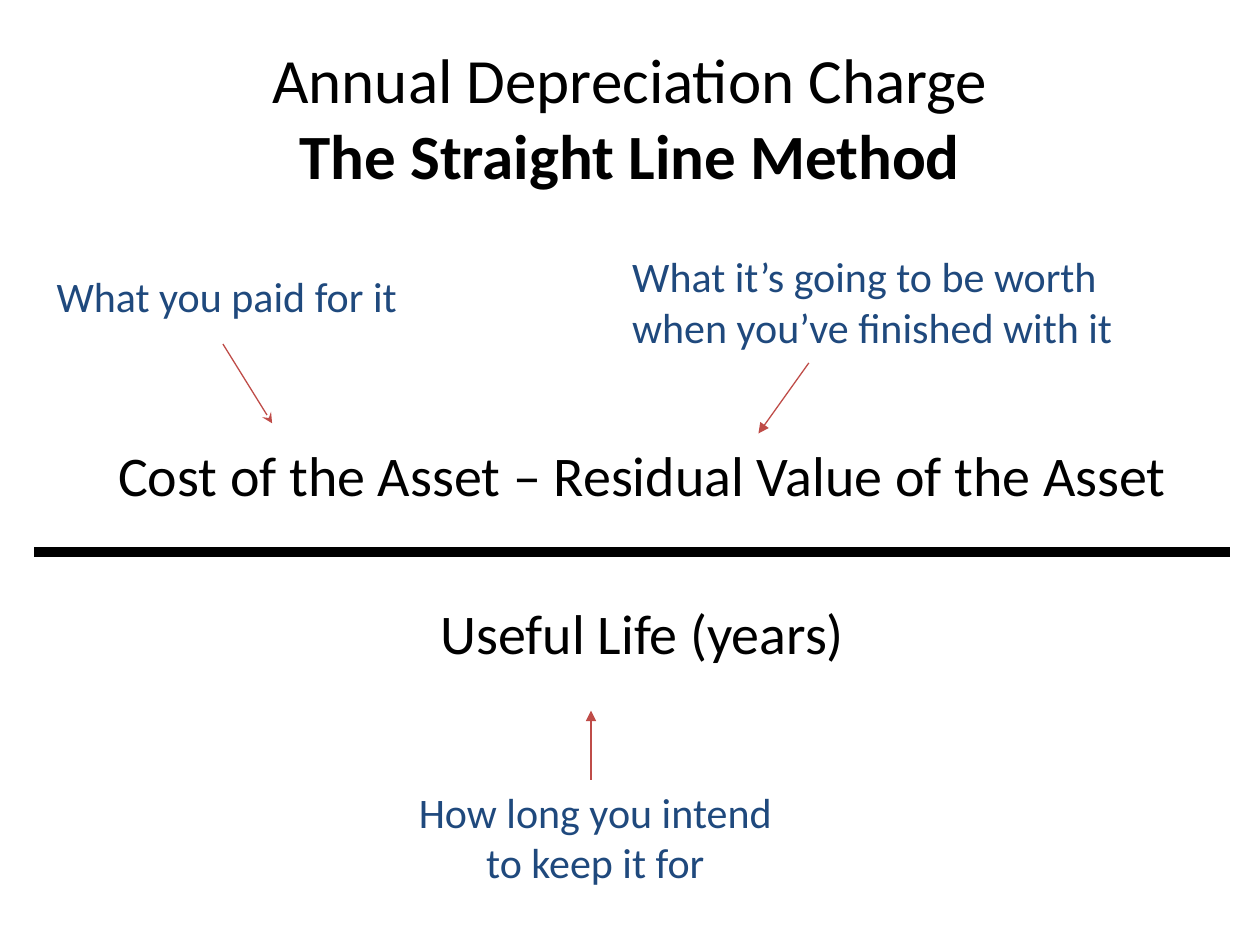
import pptx
import pptx.dml.color
import pptx.enum.shapes
import pptx.enum.text
import pptx.oxml
import pptx.oxml.ns
import pptx.util

Pt = pptx.util.Pt
ALIGN = pptx.enum.text.PP_ALIGN
ANCHOR = pptx.enum.text.MSO_ANCHOR
COLOURS = {"text": "000000", "caption": "1F497D", "arrow": "BF4C48"}


class FormulaSlide:
    """Holds the text style and the slide that is being filled."""

    font = "Calibri"

    def __init__(self, slide):
        self.slide = slide

    def colour(self, name):
        return pptx.dml.color.RGBColor.from_string(COLOURS[name])

    def add_text(self, box, paragraphs, size, colour="text", align=ALIGN.CENTER,
                 anchor=ANCHOR.TOP, inset=3.6, gap=0):
        frame = self.slide.shapes.add_textbox(*map(Pt, box)).text_frame
        frame.word_wrap = True
        frame.vertical_anchor = anchor
        frame.margin_top = Pt(inset)
        for index, lines in enumerate(paragraphs):
            paragraph = frame.add_paragraph() if index else frame.paragraphs[0]
            paragraph.alignment = align
            paragraph.space_before = Pt(gap if index else 0)
            for number, (words, bold) in enumerate(lines):
                if number:
                    paragraph.add_line_break()
                run = paragraph.add_run()
                run.text = words
                run.font.name = self.font
                run.font.size = Pt(size)
                run.font.bold = bold
                run.font.color.rgb = self.colour(colour)

    def add_caption(self, box, words, align=ALIGN.LEFT):
        self.add_text(box, [[(words, False)]], 24, "caption", align)

    def add_line(self, start, end, colour="text", width=6, head=None):
        line = self.slide.shapes.add_connector(
            pptx.enum.shapes.MSO_CONNECTOR.STRAIGHT, *map(Pt, start + end))
        line.line.color.rgb = self.colour(colour)
        line.line.width = Pt(width)
        properties = line._element.spPr
        if head:
            tail_end = pptx.oxml.parse_xml(
                f'<a:tailEnd {pptx.oxml.ns.nsdecls("a")} type="{head}"/>')
            line.line._get_or_add_ln().append(tail_end)
        properties.append(pptx.oxml.parse_xml(
            f'<a:effectLst {pptx.oxml.ns.nsdecls("a")}/>'))

    def add_arrow(self, start, end, head="triangle"):
        self.add_line(start, end, "arrow", 0.75, head)


def main():
    deck = pptx.Presentation()
    deck.slide_width, deck.slide_height = Pt(720), Pt(540)
    formula = FormulaSlide(deck.slides.add_slide(deck.slide_layouts[6]))

    formula.add_text(
        (36, 21.6, 648, 90),
        [[("Annual Depreciation Charge", False), ("The Straight Line Method", True)]],
        36, anchor=ANCHOR.MIDDLE)
    formula.add_text(
        (14.4, 157, 705.6, 356.4),
        [[("Cost of the Asset – Residual Value of the Asset", False)],
         [("Useful Life (years)", False)]],
        32, inset=94.6, gap=51.9)
    formula.add_line((19.5, 315.4), (702.7, 315.4))

    formula.add_caption((25.2, 151.2, 226.8, 36), "What you paid for it")
    formula.add_arrow((127.4, 196.6), (155.5, 241.9), "stealth")

    formula.add_caption((354.2, 139.7, 329, 65.5),
                        "What it’s going to be worth when you’ve finished with it")
    formula.add_arrow((462.2, 207.4), (433.4, 247.7))

    formula.add_caption((229.7, 445.7, 221, 65.5),
                        "How long you intend to keep it for", ALIGN.CENTER)
    formula.add_arrow((337.7, 445.7), (337.7, 406.1))

    deck.save("out.pptx")


if __name__ == "__main__":
    main()
